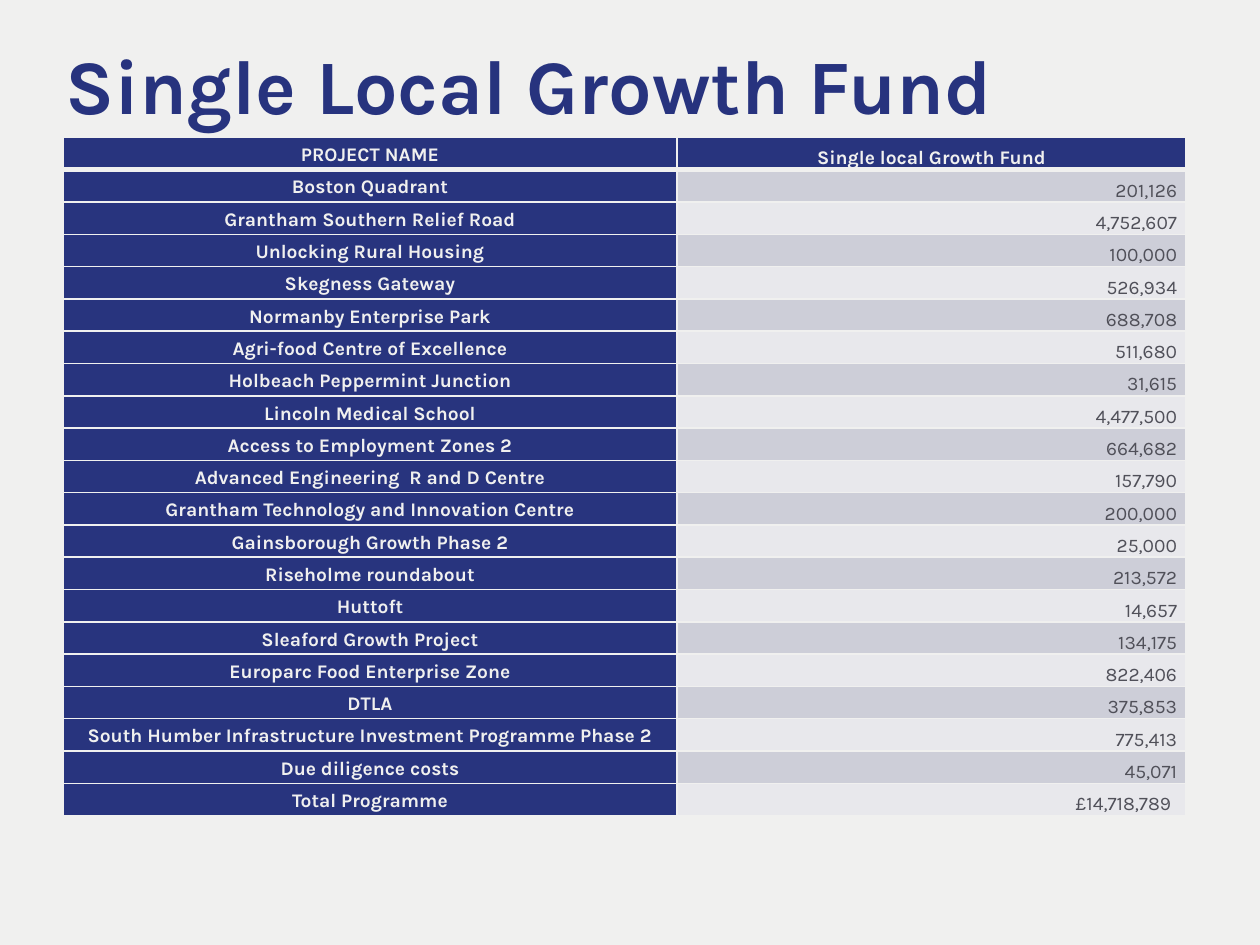
from dataclasses import dataclass

from lxml.etree import SubElement
from pptx import Presentation
from pptx.dml.color import RGBColor
from pptx.enum.text import MSO_ANCHOR, PP_ALIGN
from pptx.oxml.ns import qn
from pptx.slide import Slide
from pptx.table import _Cell
from pptx.util import Cm, Pt

FONT = "Karla"
PAPER = RGBColor(0xF0, 0xF0, 0xEF)
TITLE_BLUE = RGBColor(0x27, 0x33, 0x7E)
TABLE_BLUE = RGBColor(0x28, 0x34, 0x7E)
BAND_DARK = RGBColor(0xCD, 0xCE, 0xD8)
BAND_LIGHT = RGBColor(0xE8, 0xE8, 0xEC)
FIGURE_GREY = RGBColor(0x50, 0x50, 0x59)

SIDE_MARGIN = Cm(0.18)
TOTAL_MARGIN = Cm(0.3)
COLUMN_WIDTHS = (Cm(12.38), Cm(10.26))
TABLE_HEIGHT = Cm(13.69)


@dataclass(frozen=True)
class Project:
    name: str
    funding: str


@dataclass(frozen=True)
class CellStyle:
    fill: RGBColor
    color: RGBColor
    bold: bool
    alignment: PP_ALIGN
    anchor: MSO_ANCHOR
    bottom_border: float = 1


HEADINGS = Project("PROJECT NAME", "Single local Growth Fund")
PROJECTS = [
    Project("Boston Quadrant", "201,126"),
    Project("Grantham Southern Relief Road", "4,752,607"),
    Project("Unlocking Rural Housing", "100,000"),
    Project("Skegness Gateway", "526,934"),
    Project("Normanby Enterprise Park", "688,708"),
    Project("Agri-food Centre of Excellence", "511,680"),
    Project("Holbeach Peppermint Junction", "31,615"),
    Project("Lincoln Medical School", "4,477,500"),
    Project("Access to Employment Zones 2", "664,682"),
    Project("Advanced Engineering  R and D Centre", "157,790"),
    Project("Grantham Technology and Innovation Centre", "200,000"),
    Project("Gainsborough Growth Phase 2", "25,000"),
    Project("Riseholme roundabout", "213,572"),
    Project("Huttoft", "14,657"),
    Project("Sleaford Growth Project", "134,175"),
    Project("Europarc Food Enterprise Zone", "822,406"),
    Project("DTLA", "375,853"),
    Project("South Humber Infrastructure Investment Programme Phase 2", "775,413"),
    Project("Due diligence costs", "45,071"),
    Project("Total Programme", "£14,718,789"),
]


def name_style(row: int) -> CellStyle:
    return CellStyle(TABLE_BLUE, PAPER, True, PP_ALIGN.CENTER, MSO_ANCHOR.MIDDLE,
                     3 if row == 0 else 1)


def funding_style(row: int) -> CellStyle:
    if row == 0:
        return CellStyle(TABLE_BLUE, PAPER, True, PP_ALIGN.CENTER, MSO_ANCHOR.BOTTOM, 3)
    band = BAND_DARK if row % 2 else BAND_LIGHT
    return CellStyle(band, FIGURE_GREY, False, PP_ALIGN.RIGHT, MSO_ANCHOR.BOTTOM)


def add_borders(cell: _Cell, bottom: float, top: float) -> None:
    properties = cell._tc.get_or_add_tcPr()
    for side, width in (("lnL", 1), ("lnR", 1), ("lnT", top), ("lnB", bottom)):
        line = SubElement(properties, qn(f"a:{side}"), w=str(Pt(width)))
        fill = SubElement(line, qn("a:solidFill"))
        SubElement(fill, qn("a:srgbClr"), val=str(PAPER))


def fill_cell(cell: _Cell, text: str, style: CellStyle, top_border: float) -> None:
    add_borders(cell, style.bottom_border, top_border)
    cell.fill.solid()
    cell.fill.fore_color.rgb = style.fill
    cell.vertical_anchor = style.anchor
    cell.margin_left = cell.margin_right = SIDE_MARGIN
    cell.margin_top = cell.margin_bottom = 0
    cell.text = text
    paragraph = cell.text_frame.paragraphs[0]
    paragraph.alignment = style.alignment
    paragraph.line_spacing = 1.15
    paragraph.font.name = FONT
    paragraph.font.size = Pt(11)
    paragraph.font.bold = style.bold
    paragraph.font.color.rgb = style.color


def add_title(slide: Slide, text: str) -> None:
    box = slide.shapes.add_textbox(Cm(1.07), Cm(0.84), Cm(23.32), Cm(3.63))
    box.text_frame.word_wrap = True
    paragraph = box.text_frame.paragraphs[0]
    paragraph.text = text
    paragraph.line_spacing = 0.9
    paragraph.font.name = FONT
    paragraph.font.size = Pt(44)
    paragraph.font.bold = True
    paragraph.font.color.rgb = TITLE_BLUE


def add_funding_table(slide: Slide) -> None:
    rows = [HEADINGS, *PROJECTS]
    table = slide.shapes.add_table(len(rows), 2, Cm(1.27), Cm(2.77),
                                   sum(COLUMN_WIDTHS), TABLE_HEIGHT).table
    table.horz_banding = False
    for column, width in zip(table.columns, COLUMN_WIDTHS):
        column.width = width
    for index, project in enumerate(rows):
        table.rows[index].height = TABLE_HEIGHT // len(rows)
        top_border = 3 if index == 1 else 1
        fill_cell(table.cell(index, 0), project.name, name_style(index), top_border)
        fill_cell(table.cell(index, 1), project.funding, funding_style(index), top_border)
    # The total stands slightly in from the other figures
    table.cell(len(rows) - 1, 1).margin_right = TOTAL_MARGIN


def main() -> None:
    presentation = Presentation()
    presentation.slide_width = Cm(25.4)
    presentation.slide_height = Cm(19.05)
    slide = presentation.slides.add_slide(presentation.slide_layouts[6])

    # Background
    slide.background.fill.solid()
    slide.background.fill.fore_color.rgb = PAPER

    # Content
    add_title(slide, "Single Local Growth Fund")
    add_funding_table(slide)
    presentation.save("out.pptx")


if __name__ == "__main__":
    main()
